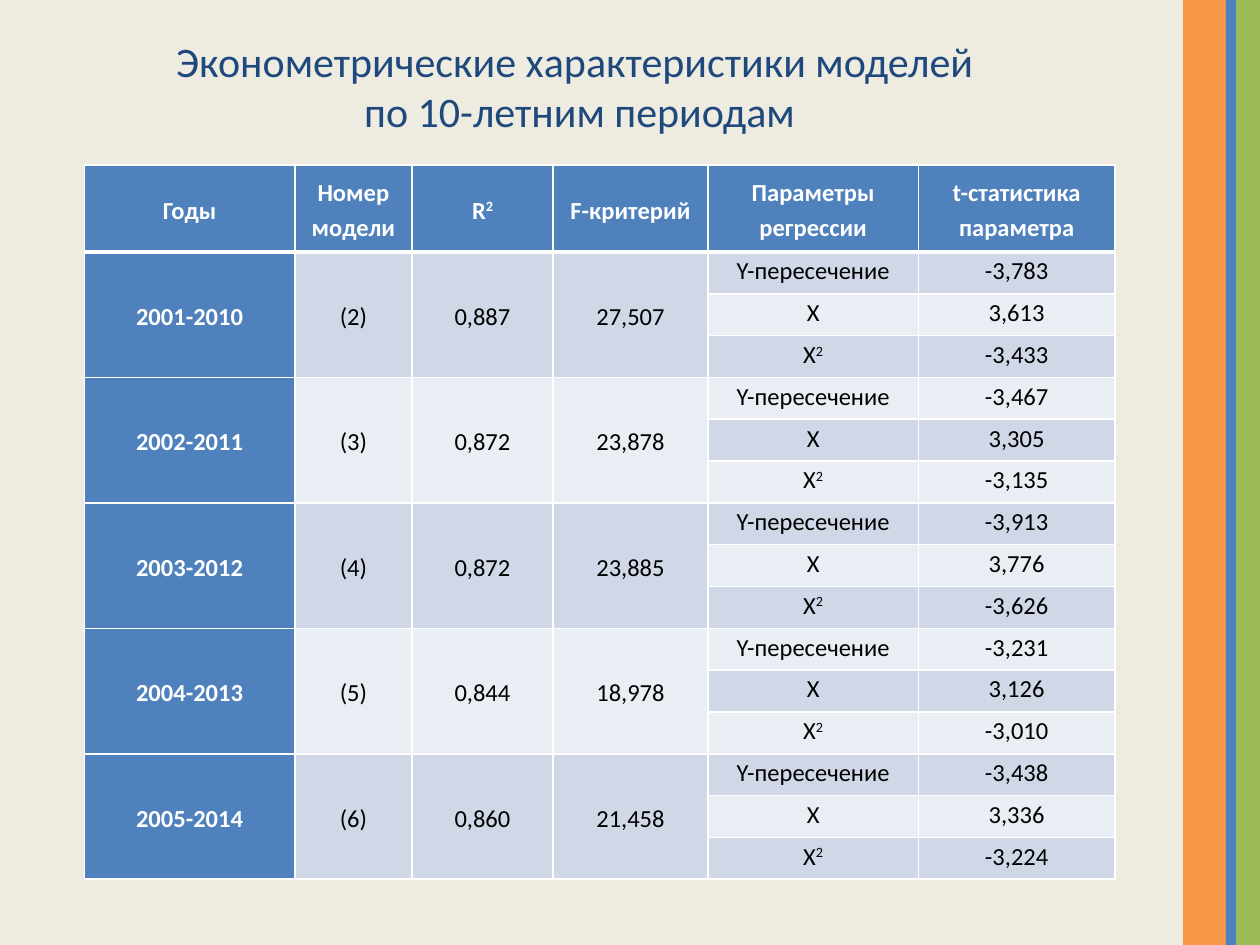
from lxml import etree
from pptx import Presentation
from pptx.dml.color import RGBColor
from pptx.enum.shapes import MSO_SHAPE
from pptx.enum.text import MSO_ANCHOR, PP_ALIGN
from pptx.oxml.ns import qn
from pptx.util import Inches, Pt

RECTANGLE = MSO_SHAPE.RECTANGLE
TOP, MIDDLE = MSO_ANCHOR.TOP, MSO_ANCHOR.MIDDLE
CENTER = PP_ALIGN.CENTER

FONT = "Calibri"
BLUE, WHITE, BLACK = "4F81BD", "FFFFFF", "000000"
BANDS = ("D0D8E8", "E9EDF4")
STRIPES = [(9.39, 0.35, "F79646"), (9.81, 0.19, "9BBB59"), (9.73, 0.08, BLUE)]

COLUMN_WIDTHS = [1.67, 0.93, 1.12, 1.23, 1.67, 1.56]
TABLE_HEIGHT, HEADER_HEIGHT = 5.67, 0.69
HEADERS = ["Годы", "Номер модели", "R^2", "F-критерий",
           "Параметры регрессии", "t-статистика\nпараметра"]
PARAMETERS = ["Y-пересечение", "X", "X^2"]
MODELS = [
    (["2001-2010", "(2)", "0,887", "27,507"], ["-3,783", "3,613", "-3,433"]),
    (["2002-2011", "(3)", "0,872", "23,878"], ["-3,467", "3,305", "-3,135"]),
    (["2003-2012", "(4)", "0,872", "23,885"], ["-3,913", "3,776", "-3,626"]),
    (["2004-2013", "(5)", "0,844", "18,978"], ["-3,231", "3,126", "-3,010"]),
    (["2005-2014", "(6)", "0,860", "21,458"], ["-3,438", "3,336", "-3,224"]),
]


def rgb(color):
    """Return the colour for a hex string."""
    return RGBColor.from_string(color)


def add_stripe(s, left, width, color):
    """Add a full-height vertical stripe."""
    sp = s.shapes.add_shape(RECTANGLE, Inches(left), 0, Inches(width), Inches(7.5))
    sp.shadow.inherit = False
    sp.fill.solid()
    sp.fill.fore_color.rgb = rgb(color)
    sp.line.fill.background()


def set_title(s, text):
    """Place and format the slide title."""
    sp = s.shapes.title
    sp.left, sp.top = Inches(0.5), Inches(0.13)
    sp.width, sp.height = Inches(8.2), Inches(1.1)
    tf = sp.text_frame
    tf.vertical_anchor = MIDDLE
    p = tf.paragraphs[0]
    p.text = text
    p.alignment = CENTER
    p.font.name, p.font.size = FONT, Pt(24)
    p.font.color.rgb = rgb("1F497D")


def set_borders(cell, top=1, bottom=1):
    """Draw white borders round a cell, with widths in points."""
    tc_pr = cell._tc.get_or_add_tcPr()
    for side, width in (("L", 1), ("R", 1), ("T", top), ("B", bottom)):
        ln = etree.SubElement(tc_pr, qn(f"a:ln{side}"), w=str(Pt(width)))
        fill = etree.SubElement(ln, qn("a:solidFill"))
        etree.SubElement(fill, qn("a:srgbClr"), val=WHITE)


def set_cell(cell, fill, top=1, bottom=1):
    """Set the borders, fill and margins of a cell."""
    set_borders(cell, top, bottom)
    cell.fill.solid()
    cell.fill.fore_color.rgb = rgb(fill)
    cell.margin_left = cell.margin_right = Inches(0.07)
    cell.margin_top = cell.margin_bottom = 0


def write_cell(cell, text, color=BLACK, bold=False, anchor=MIDDLE):
    """Write centred text, raising whatever follows a caret."""
    base, _, power = text.partition("^")
    tf = cell.text_frame
    tf.text = base
    cell.vertical_anchor = anchor
    if power:
        r = tf.paragraphs[0].add_run()
        r.text = power
        r._r.get_or_add_rPr().set("baseline", "30000")
    for p in tf.paragraphs:
        p.alignment, p.line_spacing = CENTER, 1.15
        p.font.name, p.font.size, p.font.bold = FONT, Pt(14), bold
        p.font.color.rgb = rgb(color)


def add_model(table, index, model):
    """Fill the group of rows that describes one model."""
    summary, statistics = model
    size = len(PARAMETERS)
    first = 1 + index * size
    for offset, pair in enumerate(zip(PARAMETERS, statistics)):
        row = first + offset
        for col in range(len(COLUMN_WIDTHS)):
            band = row - 1 if col >= len(summary) else index
            fill = BANDS[band % 2] if col else BLUE
            set_cell(table.cell(row, col), fill, top=3 if row == 1 else 1)
        for col, text in enumerate(pair, len(summary)):
            write_cell(table.cell(row, col), text, anchor=TOP)
    for col, text in enumerate(summary):
        cell = table.cell(first, col)
        cell.merge(table.cell(first + size - 1, col))
        write_cell(cell, text, BLACK if col else WHITE, bold=col == 0)


def add_model_table(s):
    """Add the table of model characteristics."""
    row_count = len(MODELS) * len(PARAMETERS)
    table = s.shapes.add_table(
        row_count + 1, len(COLUMN_WIDTHS), Inches(0.67), Inches(1.31),
        Inches(sum(COLUMN_WIDTHS)), Inches(TABLE_HEIGHT)).table
    table.first_row = table.horz_banding = False
    for column, width in zip(table.columns, COLUMN_WIDTHS):
        column.width = Inches(width)
    for row in table.rows:
        row.height = Inches((TABLE_HEIGHT - HEADER_HEIGHT) / row_count)
    table.rows[0].height = Inches(HEADER_HEIGHT)
    for col, text in enumerate(HEADERS):
        set_cell(table.cell(0, col), BLUE, bottom=3)
        write_cell(table.cell(0, col), text, WHITE, bold=True)
    for index, model in enumerate(MODELS):
        add_model(table, index, model)


def main():
    """Build and save the slide."""
    prs = Presentation()
    prs.slide_width, prs.slide_height = Inches(10), Inches(7.5)
    s = prs.slides.add_slide(prs.slide_layouts[5])
    s.background.fill.solid()
    s.background.fill.fore_color.rgb = rgb("EEECE1")
    for left, width, color in STRIPES:
        add_stripe(s, left, width, color)
    set_title(s, "Эконометрические характеристики моделей \vпо 10-летним периодам")
    add_model_table(s)
    prs.save("out.pptx")


if __name__ == "__main__":
    main()
